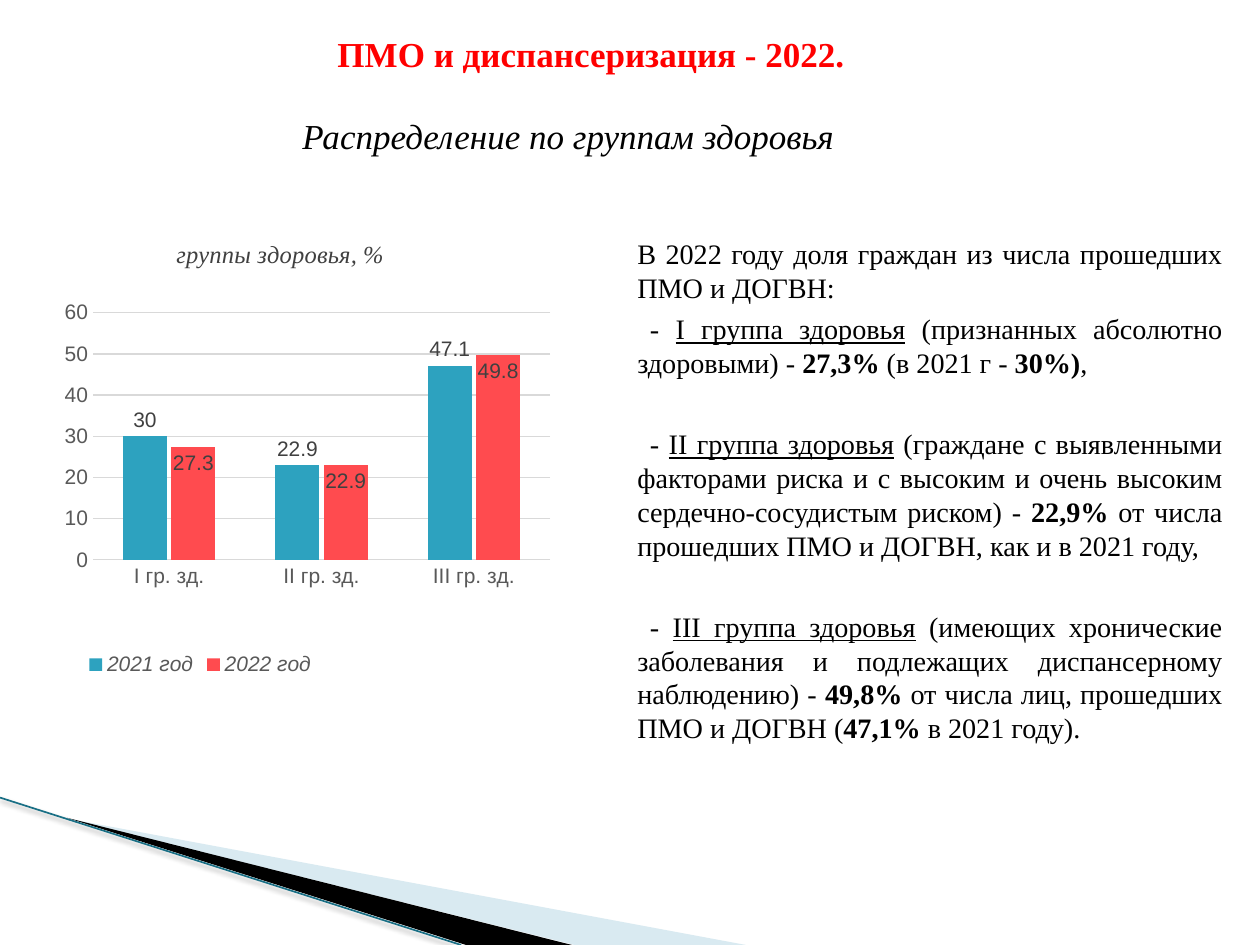
from dataclasses import dataclass
from typing import NamedTuple

from lxml import etree
from pptx import Presentation, util as u
from pptx.chart import data as cd
from pptx.dml import color as dc
from pptx.enum import chart as ce, shapes as se, text as te
from pptx.oxml import ns, parse_xml

COLS, ROWS = 100, 75
CELL = u.Inches(10) // COLS
SERIF, SANS = "Times New Roman", "Arial"
HUES = {
    "ink": "000000", "red": "FF0000", "pale": "A0CBDC", "edge": "196F85",
    "teal": "2DA2BF", "coral": "FF4B4F", "grid": "D9D9D9",
    "axis": "595959", "label": "404040",
}


class Box(NamedTuple):
    col: float
    row: float
    wide: float
    high: float


class Run(NamedTuple):
    text: str
    style: str = ""


@dataclass
class Para:
    runs: list
    gap: float = 0
    indent: float = 0


@dataclass
class Wedge:
    points: list
    hue: str
    alpha: int = 100


@dataclass
class Bars:
    name: str
    values: tuple
    hue: str
    spot: ce.XL_LABEL_POSITION


WEDGES = [
    Wedge([(5.5, 65), (59.2, 75), (45.6, 75)], "pale", 40),
    Wedge([(5.3, 64.9), (45.4, 75), (37, 75)], "ink"),
]
BARS = [
    Bars("2021 год", (30, 22.9, 47.1), "teal", ce.XL_LABEL_POSITION.OUTSIDE_END),
    Bars("2022 год", (27.3, 22.9, 49.8), "coral", ce.XL_LABEL_POSITION.INSIDE_END),
]
GROUPS = ("I гр. зд.", "II гр. зд.", "III гр. зд.")
BODY = [
    Para([Run("В 2022 году доля граждан из числа прошедших ПМО и ДОГВН:")]),
    Para([Run("- "), Run("I группа здоровья", "u"),
          Run(" (признанных абсолютно здоровыми) - "), Run("27,3%", "b"),
          Run(" (в 2021 г - "), Run("30%)", "b"), Run(",")], 4, 1),
    Para([Run("- "), Run("II группа здоровья", "u"),
          Run(" (граждане с выявленными факторами риска и с высоким и очень "
              "высоким сердечно-сосудистым риском) - "), Run("22,9% ", "b"),
          Run("от числа прошедших ПМО и ДОГВН, как и в 2021 году,")], 27, 1),
    Para([Run("- "), Run("III группа здоровья", "u"),
          Run(" (имеющих хронические заболевания и подлежащих диспансерному "
              "наблюдению) - "), Run("49,8%", "b"),
          Run(" от числа лиц, прошедших ПМО и ДОГВН ("), Run("47,1% ", "b"),
          Run("в 2021 году).")], 27, 1),
]


def span(n: float) -> int:
    return round(n * CELL)


def rgb(hue: str) -> dc.RGBColor:
    return dc.RGBColor.from_string(HUES[hue])


def apply(item, **form) -> None:
    for key, value in form.items():
        setattr(item, key, value)


def style(font, size: float, hue: str, face: str, **form) -> None:
    apply(font, size=u.Pt(size), name=face, **form)
    font.color.rgb = rgb(hue)


def wedge(slide, item: Wedge) -> None:
    first, *rest = [(span(x), span(y)) for x, y in item.points]
    pen = slide.shapes.build_freeform(*first)
    pen.add_line_segments(rest)
    form = pen.convert_to_shape()
    form.shadow.inherit = False
    form.fill.solid()
    form.fill.fore_color.rgb = rgb(item.hue)
    form.line.fill.background()
    if item.alpha < 100:
        tint = form._element.spPr.find(".//" + ns.qn("a:srgbClr"))
        etree.SubElement(tint, ns.qn("a:alpha"), val=str(item.alpha * 1000))


def edge(slide) -> None:
    line = slide.shapes.add_connector(
        se.MSO_CONNECTOR.STRAIGHT, 0, span(63.3), span(36.6), span(ROWS))
    line.line.color.rgb = rgb("edge")
    line.line.width = u.Pt(0.95)
    line._element.spPr.append(parse_xml(
        f'<a:effectLst {ns.nsdecls("a")}><a:outerShdw blurRad="{u.Pt(3.1)}" '
        f'dist="{u.Pt(1.6)}" dir="5400000" rotWithShape="0">'
        f'<a:srgbClr val="{HUES["ink"]}"><a:alpha val="38000"/></a:srgbClr>'
        '</a:outerShdw></a:effectLst>'))


def write(slide, box: Box, paras: list, size: float, hue: str = "ink",
          inset: tuple = (1, 0.5, 1, 0.5), anchor=te.MSO_ANCHOR.TOP,
          align=te.PP_ALIGN.LEFT, left: float = 0, **form) -> None:
    frame = slide.shapes.add_textbox(*map(span, box)).text_frame
    sides = ("margin_left", "margin_top", "margin_right", "margin_bottom")
    apply(frame, word_wrap=True, vertical_anchor=anchor,
          **dict(zip(sides, map(span, inset))))
    for i, item in enumerate(paras):
        para = frame.add_paragraph() if i else frame.paragraphs[0]
        para.alignment = align
        if item.gap:
            para.space_before = u.Pt(item.gap)
        if left:
            prop = para._p.get_or_add_pPr()
            prop.set("marL", str(span(left)))
            prop.set("indent", str(span(item.indent)))
        for part in item.runs:
            run = para.add_run()
            run.text = part.text
            flags = {"u": {"underline": True}, "b": {"bold": True}}
            style(run.font, size, hue, SERIF,
                  **{**form, **flags.get(part.style, {})})


def place(node, before: tuple, **pos: float) -> None:
    for old in node.findall(ns.qn("c:layout")):
        node.remove(old)
    inner = '<c:layoutTarget val="inner"/>' if "w" in pos else ""
    modes = "".join(f'<c:{k}Mode val="edge"/>' for k in pos if k in "xy")
    sizes = "".join(f'<c:{k} val="{v}"/>' for k, v in pos.items())
    layout = parse_xml(f'<c:layout {ns.nsdecls("c")}><c:manualLayout>'
                       f'{inner}{modes}{sizes}</c:manualLayout></c:layout>')
    tags = [ns.qn(tag) for tag in before]
    next(kid for kid in node if kid.tag in tags).addprevious(layout)


def graph(slide, box: Box) -> None:
    data = cd.CategoryChartData()
    data.categories = GROUPS
    for item in BARS:
        data.add_series(item.name, item.values)
    chart = slide.shapes.add_chart(
        ce.XL_CHART_TYPE.COLUMN_CLUSTERED, *map(span, box), data).chart
    style(chart.font, 10, "ink", SANS)
    apply(chart, has_title=True, has_legend=True)
    title = chart.chart_title
    title.text_frame.text = "группы здоровья, %"
    font = title.text_frame.paragraphs[0].runs[0].font
    style(font, 14, "label", SERIF, italic=True, bold=False)
    apply(chart.legend, position=ce.XL_LEGEND_POSITION.BOTTOM,
          include_in_layout=False)
    style(chart.legend.font, 12, "axis", SANS, italic=True)
    for axis in (chart.category_axis, chart.value_axis):
        apply(axis, major_tick_mark=ce.XL_TICK_MARK.NONE,
              minor_tick_mark=ce.XL_TICK_MARK.NONE)
        style(axis.tick_labels.font, 12, "axis", SANS)
        axis.format.line.fill.background()
    axis = chart.value_axis
    apply(axis, minimum_scale=0, maximum_scale=60, major_unit=10)
    grid = axis.major_gridlines.format.line
    grid.color.rgb = rgb("grid")
    grid.width = u.Pt(0.75)
    plot = chart.plots[0]
    apply(plot, gap_width=137, overlap=-10, vary_by_categories=False)
    for item, row in zip(BARS, plot.series):
        row.format.fill.solid()
        row.format.fill.fore_color.rgb = rgb(item.hue)
        apply(row.data_labels, show_value=True, position=item.spot)
        style(row.data_labels.font, 12, "label", SANS)
    place(title._element, ("c:overlay",), x=0.26, y=0.02)
    place(chart.legend._element, ("c:overlay",), x=0.09, y=0.91)
    area = chart._chartSpace.chart.plotArea
    place(area, ("c:barChart",), x=0.11, y=0.19, w=0.87, h=0.53)


def main() -> None:
    deck = Presentation()
    apply(deck, slide_width=span(COLS), slide_height=span(ROWS))
    slide = deck.slides.add_slide(deck.slide_layouts[6])
    for item in WEDGES:
        wedge(slide, item)
    edge(slide)
    write(slide, Box(24, 9.2, 55.9, 3.1),
          [Para([Run("Распределение по группам здоровья")])], 20,
          inset=(0, 0, 0, 0), anchor=te.MSO_ANCHOR.MIDDLE, italic=True)
    write(slide, Box(48.4, 15.5, 49.6, 49.6), BODY, 16.1,
          inset=(1, 3.3, 1, 0.5), align=te.PP_ALIGN.JUSTIFY, left=1.2)
    graph(slide, Box(2.8, 17.8, 41.7, 37))
    write(slide, Box(25.8, 2.1, 42.3, 4.4),
          [Para([Run("ПМО и диспансеризация - 2022.")])], 20, "red", bold=True)
    deck.save("out.pptx")


if __name__ == "__main__":
    main()
